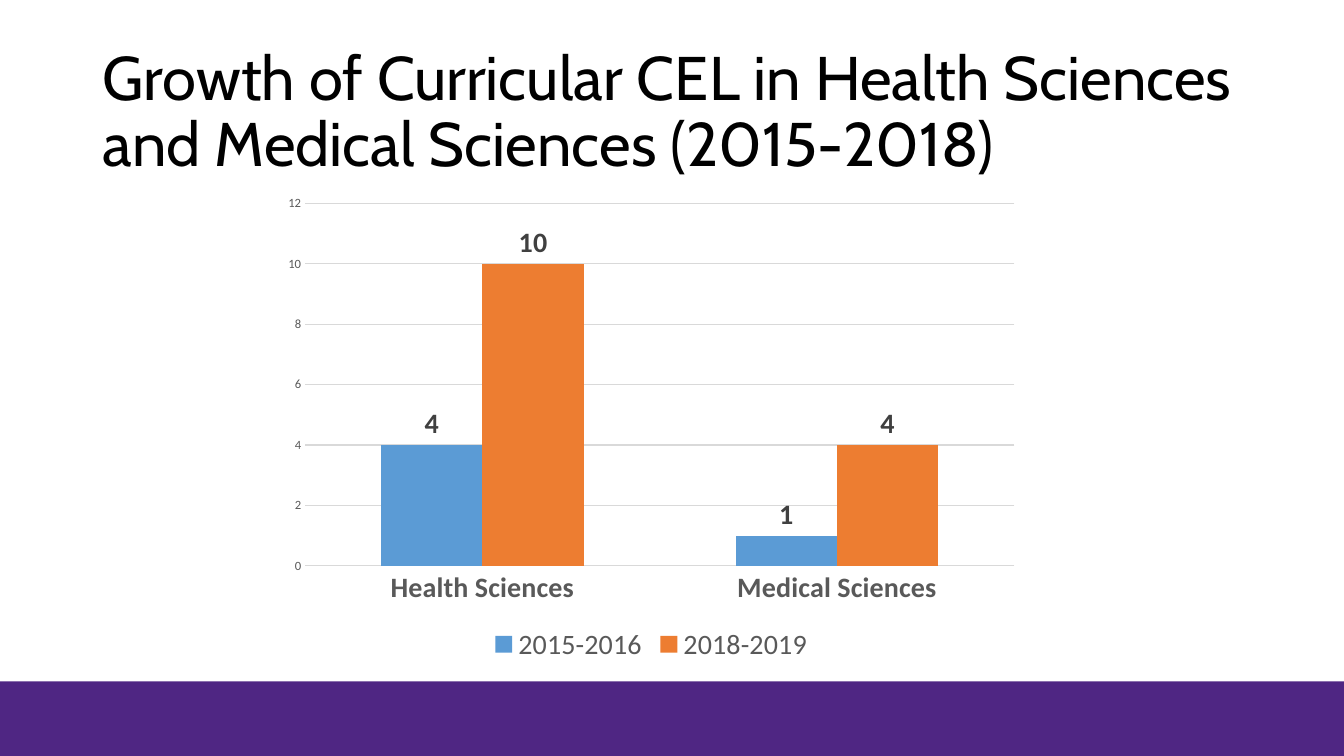
from pptx import Presentation
from pptx.chart.data import CategoryChartData
from pptx.dml.color import RGBColor
from pptx.enum.chart import XL_CHART_TYPE, XL_LABEL_POSITION, XL_LEGEND_POSITION, XL_TICK_MARK
from pptx.enum.shapes import MSO_SHAPE
from pptx.enum.text import MSO_ANCHOR, PP_ALIGN
from pptx.util import Pt

COLUMNS = XL_CHART_TYPE.COLUMN_CLUSTERED
OUTSIDE = XL_LABEL_POSITION.OUTSIDE_END
BOTTOM = XL_LEGEND_POSITION.BOTTOM
NO_TICK = XL_TICK_MARK.NONE
RECT = MSO_SHAPE.RECTANGLE
MIDDLE = MSO_ANCHOR.MIDDLE
LEFT = PP_ALIGN.LEFT

TITLE = "Growth of Curricular CEL in Health Sciences and Medical Sciences (2015-2018)"
FIELDS = ["Health Sciences", "Medical Sciences"]
SERIES = [
    ("2015-2016", (4, 1), "5B9BD5"),
    ("2018-2019", (10, 4), "ED7D31"),
]
GRAY = "595959"

PX = 9144  # 100 px to the inch
SIZE = (1333, 750)
BAND_BOX = (0, 676, 1333, 74)
TITLE_BOX = (92, 40, 1150, 145)
CHART_BOX = (271, 185, 750, 477)


def emu(box):
    return [n * PX for n in box]


def rgb(code):
    return RGBColor.from_string(code)


def style(font, size, color, bold=False, name="Calibri"):
    font.name = name
    font.size = Pt(size)
    font.bold = bold
    font.color.rgb = rgb(color)


def add_band(slide):
    band = slide.shapes.add_shape(RECT, *emu(BAND_BOX))
    band.shadow.inherit = False
    band.fill.solid()
    band.fill.fore_color.rgb = rgb("4F2683")
    band.line.fill.background()


def set_title(slide):
    title = slide.shapes.title
    title.left, title.top, title.width, title.height = emu(TITLE_BOX)
    frame = title.text_frame
    frame.word_wrap = True
    frame.vertical_anchor = MIDDLE
    para = frame.paragraphs[0]
    para.alignment = LEFT
    para.line_spacing = 0.9
    run = para.add_run()
    run.text = TITLE
    style(run.font, 44, "000000", name="Cabin")


def add_growth(slide):
    data = CategoryChartData()
    data.categories = FIELDS
    for name, vals, _ in SERIES:
        data.add_series(name, vals)
    chart = slide.shapes.add_chart(COLUMNS, *emu(CHART_BOX), data).chart
    chart.has_title = False
    style(chart.font, 10, "000000")

    chart.has_legend = True
    chart.legend.position = BOTTOM
    chart.legend.include_in_layout = False
    style(chart.legend.font, 20, GRAY)

    for axis, size, bold in ((chart.category_axis, 20, True), (chart.value_axis, 9, False)):
        axis.major_tick_mark = axis.minor_tick_mark = NO_TICK
        axis.format.line.fill.background()
        style(axis.tick_labels.font, size, GRAY, bold)

    scale = chart.value_axis
    scale.minimum_scale, scale.maximum_scale, scale.major_unit = 0, 12, 2
    grid = scale.major_gridlines.format.line
    grid.width = Pt(0.75)
    grid.color.rgb = rgb("D9D9D9")

    plot = chart.plots[0]
    plot.gap_width = 150
    plot.overlap = 0
    plot.vary_by_categories = False
    for bars, (_, _, color) in zip(plot.series, SERIES):
        bars.format.fill.solid()
        bars.format.fill.fore_color.rgb = rgb(color)
        labels = bars.data_labels
        labels.show_value = True
        labels.position = OUTSIDE
        style(labels.font, 20, "404040", True)


def main():
    deck = Presentation()
    deck.slide_width, deck.slide_height = emu(SIZE)
    slide = deck.slides.add_slide(deck.slide_layouts.get_by_name("Title Only"))
    add_band(slide)
    set_title(slide)
    add_growth(slide)
    deck.save("out.pptx")


if __name__ == "__main__":
    main()
